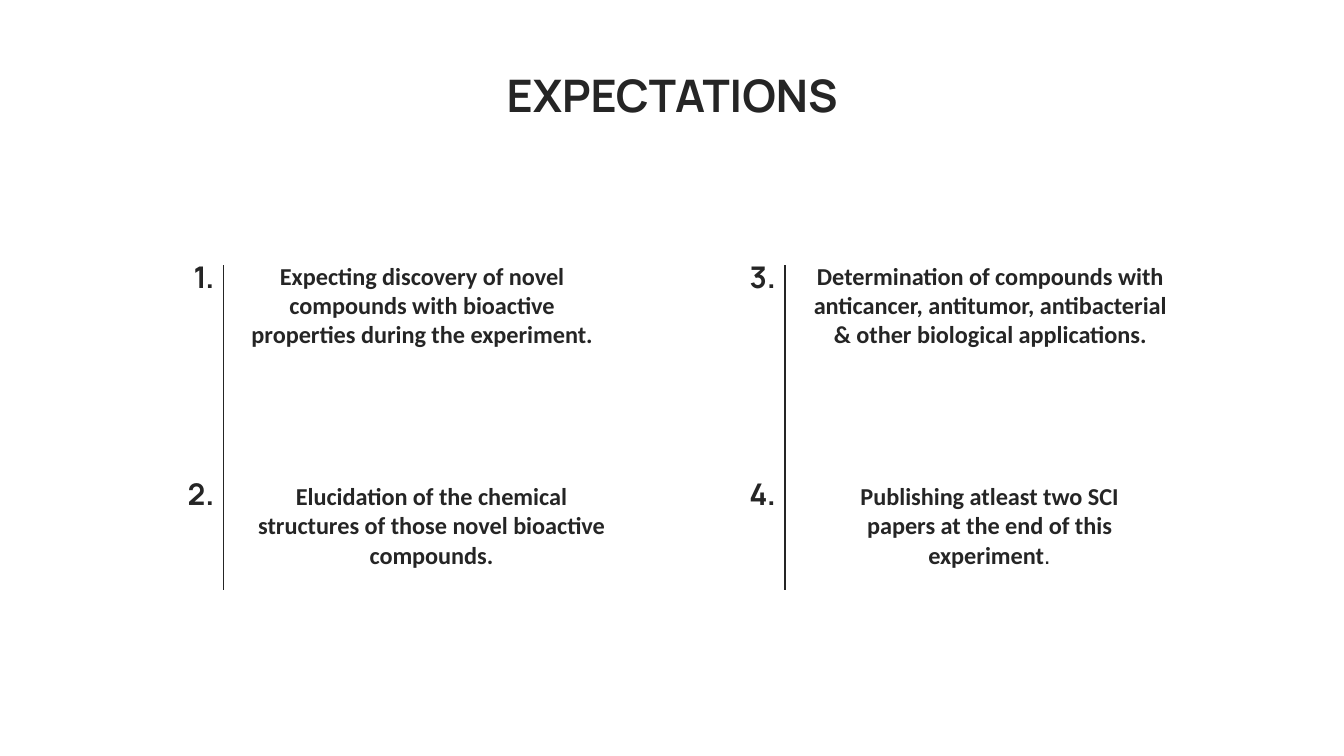
from dataclasses import dataclass

from lxml.etree import SubElement
from pptx import Presentation
from pptx.dml.color import RGBColor
from pptx.enum.shapes import MSO_CONNECTOR
from pptx.enum.text import MSO_ANCHOR, MSO_AUTO_SIZE, PP_ALIGN
from pptx.oxml.ns import qn
from pptx.util import Inches, Pt


@dataclass(frozen=True)
class Theme:
    ink: RGBColor = RGBColor(0x25, 0x25, 0x25)
    paper: RGBColor = RGBColor(0xFF, 0xFF, 0xFF)
    head_font: str = "Manrope"
    body_font: str = "Calibri"
    stop_font: str = "Arial"
    title_size: Pt = Pt(24)
    number_size: Pt = Pt(16)
    body_size: Pt = Pt(13)
    rule: Pt = Pt(0.75)


THEME = Theme()
COLS, ROWS = 100, 56.25  # grid of square cells, 16:9
CELL = Inches(0.1)

# Each item: text, columns from the column's left edge, width in columns
LEFT_ITEMS = [
    ("Expecting discovery of novel compounds with bioactive "
     "properties during the experiment.", 5.4, 28.1),
    ("Elucidation of the chemical structures of those novel "
     "bioactive compounds.", 6.1, 28.1),
]
RIGHT_ITEMS = [
    ("Determination of compounds with anticancer, antitumor, "
     "antibacterial & other biological applications.", 5.5, 28.9),
    ("Publishing atleast two SCI papers at the end of this experiment",
     6.7, 26.4),
]


def cells(*lengths):
    return [round(n * CELL) for n in lengths]


def style_run(r, font, size, bold=True):
    r.font.name, r.font.size, r.font.bold = font, size, bold
    r.font.color.rgb = THEME.ink


def put_text(sp, box, text, font, size, align, anchor):
    """Place a text shape on the grid and set its single paragraph."""
    sp.left, sp.top, sp.width, sp.height = cells(*box)
    tf = sp.text_frame
    tf.text = text
    tf.word_wrap = True
    tf.auto_size = MSO_AUTO_SIZE.NONE
    tf.vertical_anchor = anchor
    tf.margin_left = tf.margin_right = tf.margin_top = tf.margin_bottom = CELL
    p = tf.paragraphs[0]
    pPr = p._p.get_or_add_pPr()
    pPr.set("marL", "0")
    pPr.set("indent", "0")
    SubElement(pPr, qn("a:buNone"))
    p.alignment = align
    p.space_before = Pt(0)
    style_run(p.runs[0], font, size)
    return p


def add_rule(s, x, top, bottom):
    x, top, bottom = cells(x, top, bottom)
    line = s.shapes.add_connector(MSO_CONNECTOR.STRAIGHT, x, top, x, bottom)
    line.line.color.rgb = THEME.ink
    line.line.width = THEME.rule
    SubElement(line._element.spPr, qn("a:effectLst"))


def add_column(s, box, items, bodies, first):
    """Numbered items stacked in two rows beside a vertical rule."""
    left, top, height = box
    add_rule(s, left + 4.7, top + 1.3, top + height)
    paragraphs = []
    for i, ((text, dx, width), body) in enumerate(zip(items, bodies)):
        # Number
        number = s.shapes.add_textbox(0, 0, 0, 0)
        put_text(number, (left, top + 0.3 + 16.15 * i, 5, 4.2),
                 f"{first + i}.", THEME.head_font, THEME.number_size,
                 PP_ALIGN.RIGHT, MSO_ANCHOR.BOTTOM)
        # Statement
        paragraphs.append(put_text(
            body, (left + dx, top + 16.4 * i, width, 7), text,
            THEME.body_font, THEME.body_size,
            PP_ALIGN.CENTER, MSO_ANCHOR.TOP))
    return paragraphs


def add_expectations(prs):
    s = prs.slides.add_slide(prs.slide_layouts.get_by_name("Comparison"))
    s.background.fill.solid()
    s.background.fill.fore_color.rgb = THEME.paper
    title, *bodies = s.placeholders

    # Title
    put_text(title, (23.85, 3.05, 52.3, 7), "EXPECTATIONS", THEME.head_font,
             THEME.title_size, PP_ALIGN.CENTER, MSO_ANCHOR.BOTTOM)

    # Two columns of numbered expectations
    add_column(s, (11.95, 18.43, 25.45), LEFT_ITEMS, bodies[:2], 1)
    closing = add_column(s, (53.72, 18.43, 25.45), RIGHT_ITEMS,
                         bodies[2:], 3)[-1]

    # Full stop in a lighter face
    r = closing.add_run()
    r.text = "."
    style_run(r, THEME.stop_font, THEME.body_size, bold=False)


def main():
    prs = Presentation()
    prs.slide_width, prs.slide_height = cells(COLS, ROWS)
    add_expectations(prs)
    prs.save("out.pptx")


if __name__ == "__main__":
    main()
